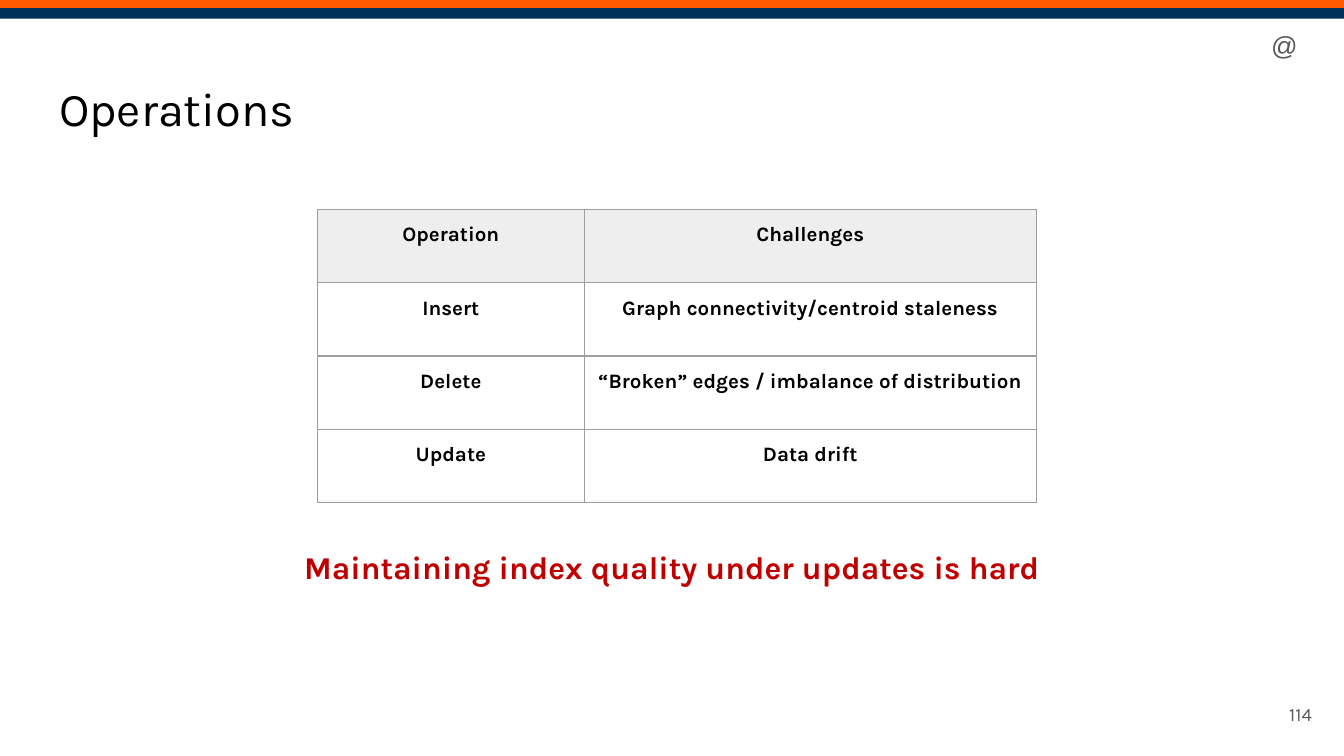
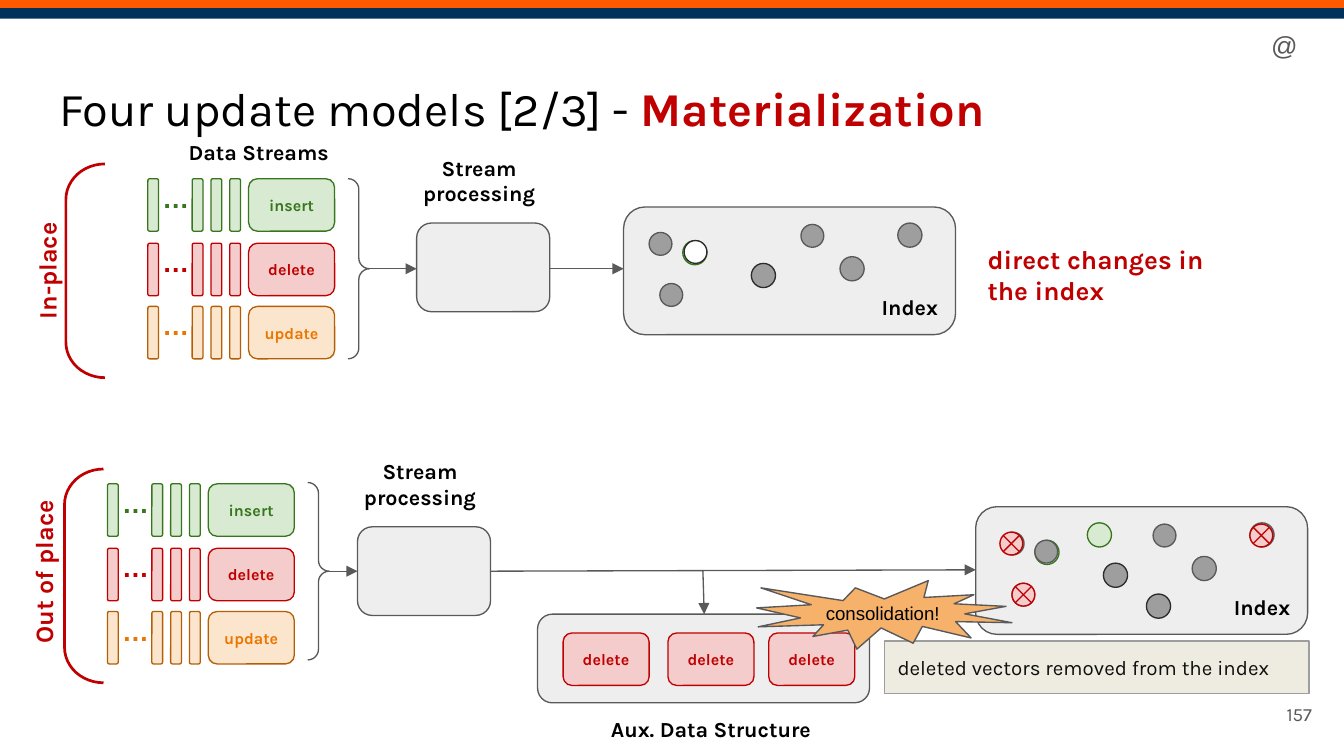
from dataclasses import dataclass
from lxml.etree import SubElement as Sub
from pptx import Presentation as Deck
from pptx.dml.color import RGBColor as Rgb
from pptx.enum.shapes import MSO_CONNECTOR as Link, MSO_SHAPE as Kind
from pptx.enum.text import MSO_ANCHOR as Anchor, MSO_AUTO_SIZE as Auto, PP_ALIGN as Align
from pptx.oxml.ns import qn
from pptx.util import Pt

PX = 9144


@dataclass(frozen=True)
class Theme:
    orange: str = "FF5A00"
    navy: str = "00315B"
    ink: str = "000000"
    soft: str = "0E0E0E"
    gray: str = "595959"
    dark: str = "2C2C2C"
    mid: str = "9E9E9E"
    pale: str = "EEEEEE"
    sand: str = "EEECE1"
    white: str = "FFFFFF"
    red: str = "C00000"
    pink: str = "F4CCCC"
    green: str = "38761D"
    mint: str = "D9EAD3"
    burst: str = "F6B26B"
    peach: str = "FCE5CD"
    brown: str = "B45F06"
    amber: str = "EA7600"
    font: str = "Karla"
    plain: str = "Arial"
    title: float = 25.2
    claim: float = 17
    big: float = 14
    dots: float = 14.4
    side: float = 13.4
    label: float = 11.5
    cell: float = 11
    small: float = 10
    tiny: float = 8.6
    thin: float = 0.72
    hair: float = 0.75
    thick: float = 1.44


T = Theme()

WIDE = 1000
BANDS = [((0, -1, WIDE, 8), T.orange), ((0, 6, WIDE, 8), T.navy)]
MARK = ("@", (936, 12, 38, 44))
TITLE = (34, 49, 932, 63)
PAGE = (926, 510, 60, 43)

ROWS = [
    ("Operation", "Challenges"),
    ("Insert", "Graph connectivity/centroid staleness"),
    ("Delete", "“Broken” edges / imbalance of distribution"),
    ("Update", "Data drift"),
]
GRID = (236, 156)
COLS = (199, 336)
TALL = 218
CLAIM = ("Maintaining index quality under updates is hard", (34, 393, 932, 127))

HEAD = [("Four update models [2/3] - ", {}), ("Materialization", dict(color=T.red, bold=True))]
STREAMS = [
    ("insert", T.mint, T.green, T.green),
    ("delete", T.pink, T.red, T.red),
    ("update", T.peach, T.brown, T.amber),
]
TOPS = (0, 48, 95)
BARS = (0, 33, 47, 61)
MODELS = [
    dict(name="In-place", side=(-69, 178, 204, 47), bracket=(49, 122), start=(110, 133),
         brace=(259, 133, 16, 134), box=(310, 166), index=(464, 154)),
    dict(name="Out of place", side=(-47, 402, 155, 47), bracket=(48, 349), start=(80, 360),
         brace=(229, 359, 16, 132), box=(266, 392), index=(726, 377)),
]
ARROWS = [
    (275, 200, 310, 200), (409, 200, 464, 200),
    (245, 425, 266, 425), (365, 425, 726, 424), (523, 425, 524, 457),
]
DOTS = [
    (19, 19, 17, T.mid, T.gray), (132, 13, 17, T.mid, T.gray),
    (204, 12, 18, T.mid, T.gray), (161, 37, 18, T.mid, T.gray),
    (27, 57, 17, T.mid, T.gray), (44, 25, 18, T.mint, T.green),
    (95, 42, 18, T.mid, T.dark),
]
EXTRA = [
    [(45, 25, 17, T.white, T.dark)],
    [(44, 25, 17, T.mid, T.gray), (127, 65, 18, T.mid, T.dark), (83, 12, 18, T.mint, T.green)],
]
CROSSES = [(18, 19), (27, 57), (204, 13)]
NOTES = [
    ("Data Streams", (128, 94, 129, 39), {}),
    ("Aux. Data Structure", (432, 523, 194, 39), {}),
    ("direct changes in the index", (725, 171, 184, 67),
     dict(size=T.big, color=T.red, align=Align.LEFT)),
]
AUX = (400, 457, 247, 66)
GONE = (419, 497, 572)
REMOVED = ("deleted vectors removed from the index", (658, 477, 316, 39))
BURST = ("consolidation!", (563, 432, 190, 51))


def emu(*nums):
    return [num * PX for num in nums]


def write(frame, text, size=T.label, color=T.ink, font=T.font, bold=False,
          align=Align.LEFT, anchor=Anchor.TOP, fit=Auto.NONE, after=0, lines=None, flat=False):
    frame.word_wrap = True
    frame.auto_size = fit
    frame.vertical_anchor = anchor
    frame.margin_left = frame.margin_right = frame.margin_top = frame.margin_bottom = 10 * PX
    para = frame.paragraphs[0]
    if flat:
        props = para._p.get_or_add_pPr()
        props.set("marL", "0")
        props.set("indent", "0")
        Sub(props, qn("a:buNone"))
    para.alignment = align
    para.space_before = Pt(0)
    para.space_after = Pt(after)
    if lines:
        para.line_spacing = lines
    for part, over in [(text, {})] if isinstance(text, str) else text:
        run = para.add_run()
        run.text = part
        run.font.name = font
        run.font.size = Pt(size)
        run.font.bold = over.get("bold", bold)
        run.font.color.rgb = Rgb.from_string(over.get("color", color))


def draw(slide, kind, area, fill=None, line=None, width=T.thin, adjust=()):
    shape = slide.shapes.add_shape(kind, *emu(*area))
    shape.shadow.inherit = False
    if fill:
        shape.fill.solid()
        shape.fill.fore_color.rgb = Rgb.from_string(fill)
    else:
        shape.fill.background()
    if line:
        shape.line.color.rgb = Rgb.from_string(line)
        shape.line.width = Pt(width)
    else:
        shape.line.fill.background()
    for spot, value in enumerate(adjust):
        shape.adjustments[spot] = value
    return shape


def note(slide, text, area, **form):
    box = slide.shapes.add_textbox(*emu(*area))
    write(box.text_frame, text, **form)
    return box


def place(holder, text, area, turn=0, **form):
    holder.left, holder.top, holder.width, holder.height = emu(*area)
    holder.rotation = turn
    write(holder.text_frame, text, **form)


def arrow(slide, ends):
    link = slide.shapes.add_connector(Link.STRAIGHT, *emu(*ends))
    link.line.color.rgb = Rgb.from_string(T.gray)
    link.line.width = Pt(T.thin)
    Sub(link.line._get_or_add_ln(), qn("a:tailEnd"), type="triangle")
    Sub(link.element.spPr, qn("a:effectLst"))


def start(deck, layout, title, page):
    slide = deck.slides.add_slide(deck.slide_layouts[layout])
    place(slide.shapes.title, title, TITLE, size=T.title)
    note(slide, page, PAGE, size=T.small, color=T.gray, align=Align.RIGHT, anchor=Anchor.MIDDLE)
    return slide


def brand(deck, slide):
    parts = [draw(slide, Kind.RECTANGLE, area, fill) for area, fill in BANDS]
    parts.append(note(slide, *MARK, size=T.big, color=T.gray, font=T.plain, fit=Auto.SHAPE_TO_FIT_TEXT))
    for spot, part in enumerate(parts):
        part.element[0][0].set("id", str(20 + spot))
        deck.slide_master.shapes.element.append(part.element)


def edge(cell):
    props = cell._tc.get_or_add_tcPr()
    for spot, name in enumerate(("a:lnL", "a:lnR", "a:lnT", "a:lnB")):
        line = props.makeelement(qn(name), {"w": str(Pt(T.hair))})
        Sub(Sub(line, qn("a:solidFill")), qn("a:srgbClr"), val=T.mid)
        props.insert(spot, line)


def table(slide):
    area = (*GRID, sum(COLS), TALL)
    grid = slide.shapes.add_table(len(ROWS), len(COLS), *emu(*area)).table
    grid.first_row = grid.horz_banding = False
    for col, width in zip(grid.columns, COLS):
        col.width = width * PX
    for r, words in enumerate(ROWS):
        grid.rows[r].height = TALL * PX // len(ROWS)
        for c, word in enumerate(words):
            cell = grid.cell(r, c)
            write(cell.text_frame, word, size=T.cell, bold=True, align=Align.CENTER)
            cell.margin_left = cell.margin_right = cell.margin_top = cell.margin_bottom = 10 * PX
            cell.fill.solid()
            cell.fill.fore_color.rgb = Rgb.from_string(T.white if r else T.pale)
            edge(cell)


def panel(slide, area):
    draw(slide, Kind.ROUNDED_RECTANGLE, area, T.pale, T.gray)


def chip(slide, x, y, name, fill, line, color):
    box = draw(slide, Kind.ROUNDED_RECTANGLE, (x, y, 64, 39), fill, line)
    write(box.text_frame, name, size=T.tiny, color=color, bold=True,
          align=Align.CENTER, anchor=Anchor.MIDDLE)


def label(slide, text, area, **form):
    base = dict(bold=True, align=Align.CENTER, fit=Auto.SHAPE_TO_FIT_TEXT)
    note(slide, text, area, **{**base, **form})


def model(slide, holder, data, extra):
    place(holder, data["name"], data["side"], turn=270, size=T.side, color=T.red, bold=True,
          align=Align.CENTER, anchor=Anchor.MIDDLE, after=11.5, lines=1.15, flat=True)
    draw(slide, Kind.LEFT_BRACKET, (*data["bracket"], 29, 159), line=T.red, width=T.thick, adjust=[0.91])
    x, y = data["start"]
    for top, (name, fill, line, color) in zip(TOPS, STREAMS):
        chip(slide, x + 75, y + top, name, fill, line, color)
        for bar in BARS:
            draw(slide, Kind.ROUNDED_RECTANGLE, (x + bar, y + top, 8, 39), fill, line)
        label(slide, "…", (x + 1, y + top - 8, 47, 44), size=T.dots, color=color,
              font=T.plain, align=Align.LEFT)
    draw(slide, Kind.RIGHT_BRACE, data["brace"], line=T.gray, adjust=(0.5, 0.5))
    x, y = data["box"]
    panel(slide, (x, y, 99, 66))
    label(slide, "Stream processing", (x - 29, y - 61, 151, 78))
    x, y = data["index"]
    panel(slide, (x, y, 247, 95))
    label(slide, "Index", (x + 169, y + 55, 88, 39))
    for dx, dy, size, fill, line in DOTS + extra:
        draw(slide, Kind.OVAL, (x + dx, y + dy, size, size), fill, line)


def main():
    deck = Deck()
    deck.slide_width = WIDE * PX
    deck.slide_height = WIDE * PX * 9 // 16

    first = start(deck, 1, "Operations", "114")
    brand(deck, first)
    place(first.placeholders[1], *CLAIM, size=T.claim, color=T.red, bold=True,
          align=Align.CENTER, after=12, lines=1.15, flat=True)
    table(first)

    second = start(deck, 3, HEAD, "157")
    for spot, data in enumerate(MODELS):
        model(second, second.placeholders[spot + 1], data, EXTRA[spot])
    x, y = MODELS[1]["index"]
    for dx, dy in CROSSES:
        draw(second, Kind.FLOWCHART_SUMMING_JUNCTION, (x + dx, y + dy, 17, 17), T.pink, T.red, T.hair)
    panel(second, AUX)
    for left in GONE:
        chip(second, left, 471, *STREAMS[1])
    for ends in ARROWS:
        arrow(second, ends)
    for text, area, form in NOTES:
        label(second, text, area, **form)
    text, area = REMOVED
    box = draw(second, Kind.RECTANGLE, area, T.sand, T.mid, T.hair)
    write(box.text_frame, text, size=T.cell, color=T.soft)
    text, area = BURST
    box = draw(second, Kind.EXPLOSION1, area, T.burst, T.gray, T.hair)
    write(box.text_frame, text, size=T.small, font=T.plain, align=Align.CENTER, anchor=Anchor.MIDDLE)

    deck.save("out.pptx")


if __name__ == "__main__":
    main()
